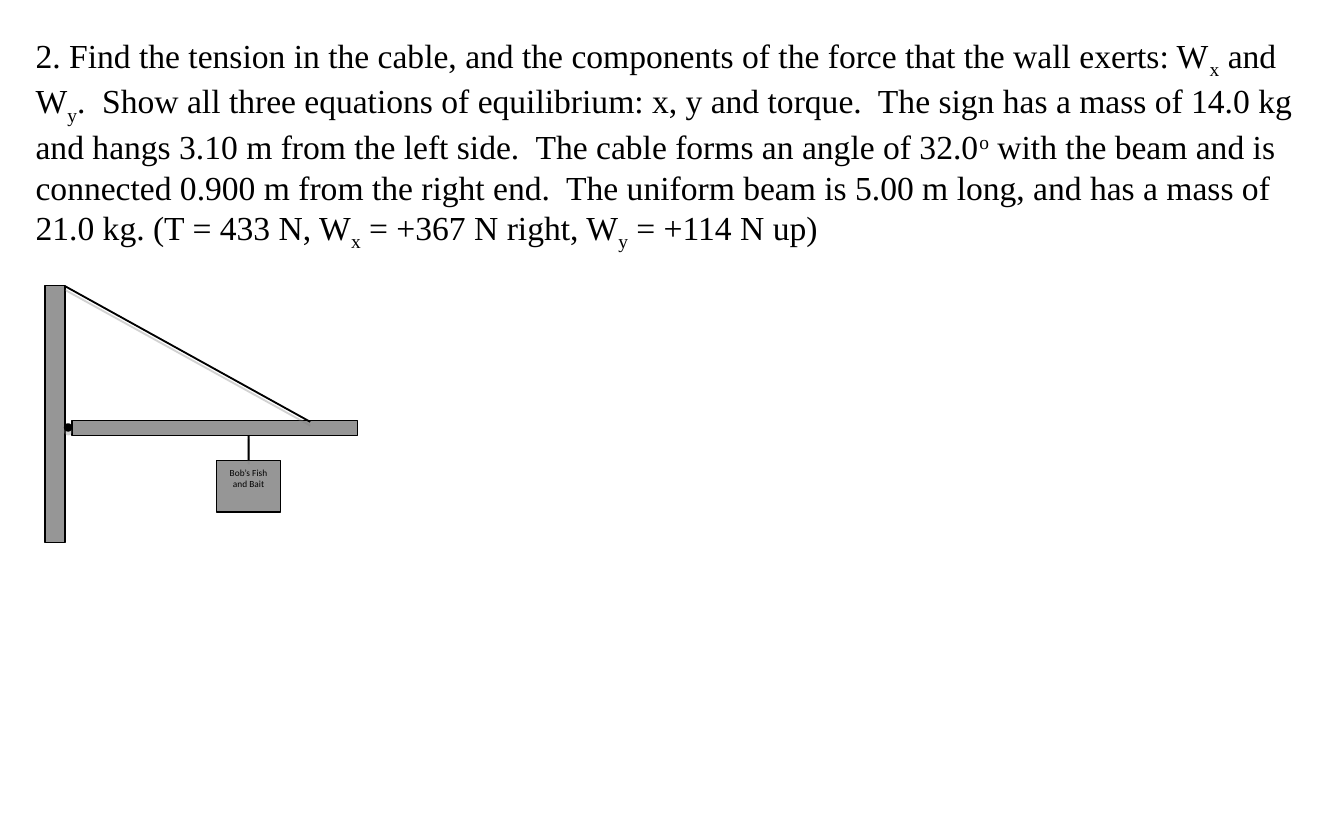
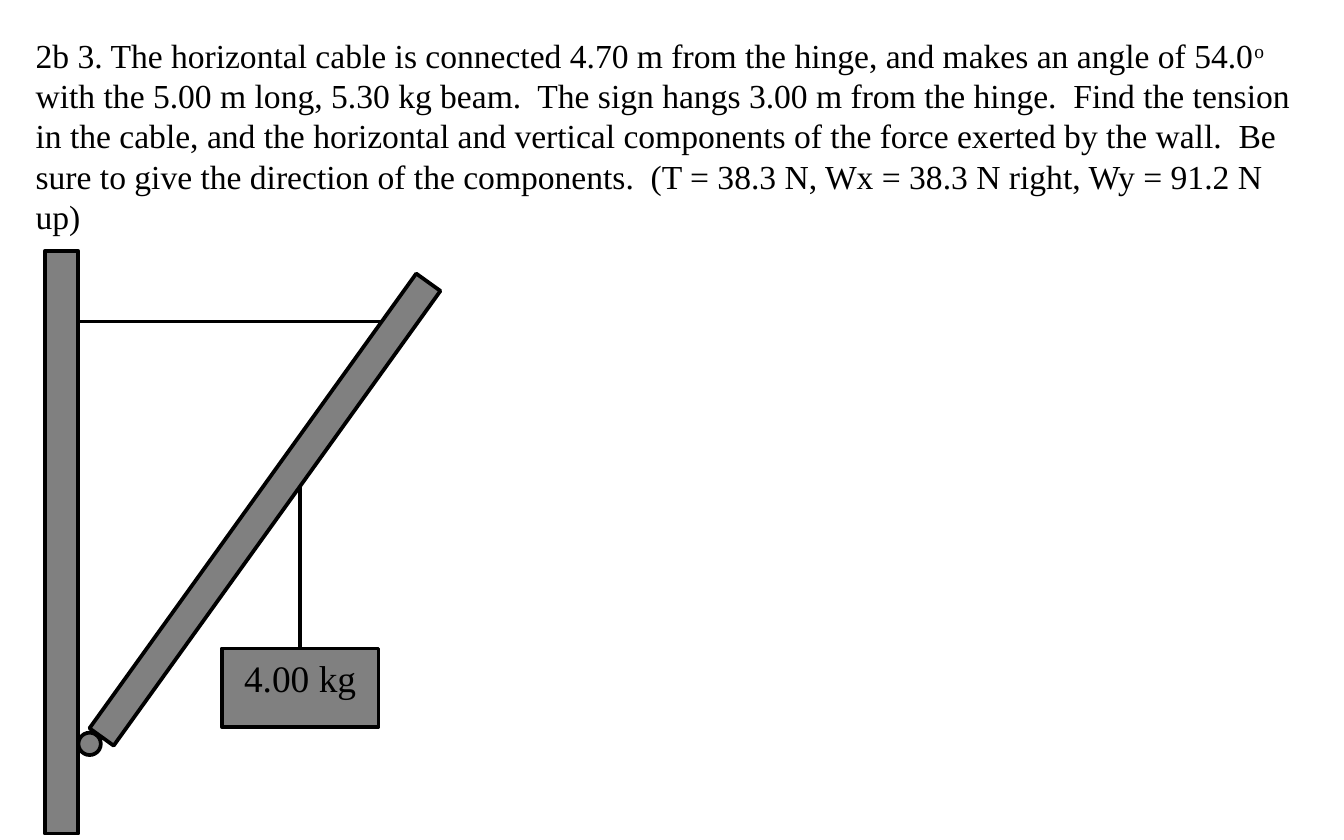
from lxml.etree import SubElement
from pptx import Presentation
from pptx.dml.color import RGBColor
from pptx.enum.shapes import MSO_CONNECTOR as Connector, MSO_SHAPE as Shape
from pptx.enum.text import MSO_ANCHOR as Anchor, MSO_AUTO_SIZE as AutoSize, PP_ALIGN as Align
from pptx.oxml.ns import qn
from pptx.util import Pt

BLACK = "000000"
SERIF = "Times New Roman"
SUB, SUPER = -25000, 30000
TOP = 0


def color(value):
    return RGBColor.from_string(value)


def apply(target, formats):
    for name, value in formats.items():
        setattr(target, name, value)


class Problem:
    def __init__(self, deck, fill, line_width, shadow=False):
        self.slide = deck.slides.add_slide(deck.slide_layouts[6])
        self.fill = fill
        self.line_width = line_width
        self.shadow = shadow
        self.diagram = None

    def add_words(self, paragraph, parts, size, font=SERIF):
        for part in parts:
            words, baseline = part if isinstance(part, tuple) else (part, 0)
            run = paragraph.add_run()
            run.text = words
            apply(run.font, {"size": Pt(size), "name": font})
            run.font.color.rgb = color(BLACK)
            if baseline:
                run.font._element.set("baseline", str(baseline))

    def statement(self, height, *parts):
        box = self.slide.shapes.add_textbox(Pt(12), Pt(15), Pt(696), Pt(height))
        apply(box.text_frame, {"word_wrap": True, "auto_size": AutoSize.SHAPE_TO_FIT_TEXT})
        self.add_words(box.text_frame.paragraphs[0], parts, 18)
        self.diagram = self.slide.shapes.add_group_shape().shapes

    def outline(self, line, width):
        line.color.rgb = color(BLACK)
        line.width = Pt(width)

    def cast_shadow(self, effects):
        shadow = SubElement(effects, qn("a:outerShdw"), dist=str(Pt(2)), dir="5400000",
                            algn="ctr", rotWithShape="0")
        tint = SubElement(shadow, qn("a:srgbClr"), val="808080")
        SubElement(tint, qn("a:alpha"), val="35000")

    def body(self, kind, left, top, width, height, fill=None, line_width=None, rotation=0):
        body = self.diagram.add_shape(kind, Pt(left), Pt(top), Pt(width), Pt(height))
        body.shadow.inherit = False
        body.rotation = rotation
        body.fill.solid()
        body.fill.fore_color.rgb = color(fill or self.fill)
        self.outline(body.line, line_width or self.line_width)
        return body

    def bar(self, *place, rotation=0):
        return self.body(Shape.RECTANGLE, *place, rotation=rotation)

    def hinge(self, left, top, size, **look):
        hinge = self.body(Shape.OVAL, left, top, size, size, **look)
        if self.shadow:
            self.cast_shadow(hinge._element.spPr.find(qn("a:effectLst")))

    def sign(self, place, label, size, font=SERIF, space_after=0):
        sign = self.bar(*place)
        apply(sign.text_frame, {"word_wrap": True, "vertical_anchor": Anchor.TOP})
        paragraph = sign.text_frame.paragraphs[0]
        apply(paragraph, {"alignment": Align.CENTER, "space_after": Pt(space_after)})
        self.add_words(paragraph, [label], size, font)
        return sign

    def cable(self, x1, y1, x2, y2, width, sign=None):
        cable = self.diagram.add_connector(Connector.STRAIGHT, Pt(x1), Pt(y1), Pt(x2), Pt(y2))
        self.outline(cable.line, width)
        effects = SubElement(cable._element.spPr, qn("a:effectLst"))
        if self.shadow:
            self.cast_shadow(effects)
        if sign is not None:
            cable.end_connect(sign, TOP)


def level_beam(deck):
    problem = Problem(deck, "969696", 0.75, shadow=True)
    problem.statement(
        117,
        "2. Find the tension in the cable, and the components of the force that the wall exerts: W",
        ("x", SUB), " and W", ("y", SUB),
        ".  Show all three equations of equilibrium: x, y and torque.  The sign has a mass of "
        "14.0 kg and hangs 3.10 m from the left side.  The cable forms an angle of 32.0",
        ("o", SUPER),
        " with the beam and is connected 0.900 m from the right end.  The uniform beam is "
        "5.00 m long, and has a mass of 21.0 kg. (T = 433 N, W",
        ("x", SUB), " = +367 N right, W", ("y", SUB), " = +114 N up)",
    )
    problem.bar(24, 153, 10.8, 137.5)
    problem.bar(38.6, 225.3, 153, 8)
    problem.hinge(35, 227.5, 3, fill=BLACK, line_width=1.5)
    problem.cable(35, 153.4, 166.2, 226, 1)
    sign = problem.sign((116, 246.8, 34.4, 27.5), "Bob’s Fish and Bait", 5, "Calibri", 10)
    problem.cable(133.2, 233.3, 133.2, 246.8, 1, sign)


def slanted_beam(deck):
    problem = Problem(deck, "808080", 2)
    problem.statement(
        138,
        "2b 3. The horizontal cable is connected 4.70 m from the hinge, and makes an angle of 54.0",
        ("o", SUPER),
        " with the 5.00 m long, 5.30 kg beam.  The sign hangs 3.00 m from the hinge.  Find the "
        "tension in the cable, and the horizontal and vertical components of the force exerted "
        "by the wall.  Be sure to give the direction of the components.  (T = 38.3 N, "
        "Wx = 38.3 N right, Wy = 91.2 N up)",
    )
    problem.bar(24, 134.5, 18, 312)
    problem.bar(-8, 265, 300, 16, rotation=305.7)
    problem.hinge(42, 392.5, 12)
    problem.cable(42, 172.3, 204, 172.3, 2)
    sign = problem.sign((118.8, 347.5, 84, 42), "4.00 kg", 20)
    problem.cable(160.8, 260.5, 160.8, 347.5, 2, sign)


def main():
    deck = Presentation()
    apply(deck, {"slide_width": Pt(720), "slide_height": Pt(450)})
    level_beam(deck)
    slanted_beam(deck)
    deck.save("out.pptx")


if __name__ == "__main__":
    main()
